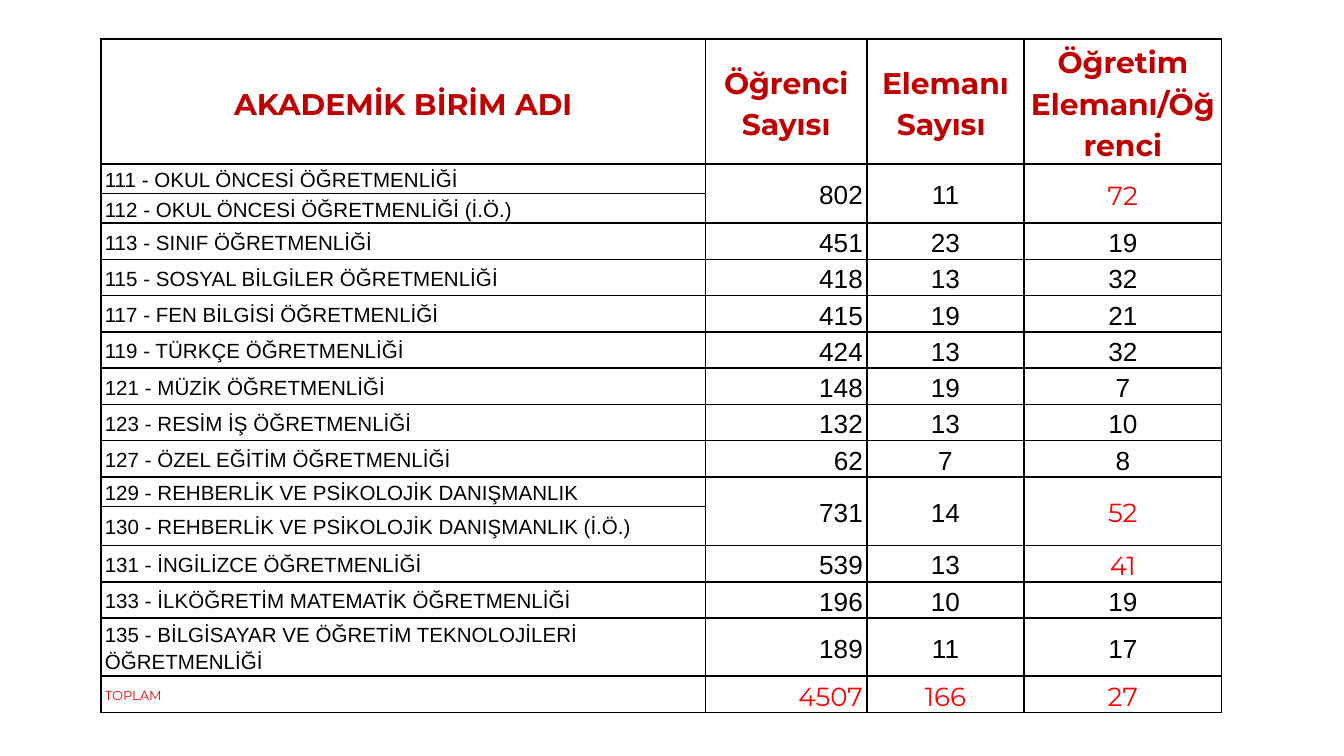
import pptx
import pptx.dml.color
import pptx.enum.text
import pptx.oxml
import pptx.oxml.ns
import pptx.util
from pptx.util import Inches

ALIGN = pptx.enum.text.PP_ALIGN
BORDER_COLOR = "000000"
HIGH_RATIO = 40  # students per teacher above this are shown in red

COLUMN_WIDTHS = [4.5, 1.2, 1.17, 1.47]
COLUMN_ALIGNMENTS = [ALIGN.LEFT, ALIGN.RIGHT, ALIGN.CENTER, ALIGN.CENTER]
HEADER_HEIGHT = 0.92
ROW_HEIGHT = 0.27

HEADER = ["AKADEMİK BİRİM ADI", "Öğrenci Sayısı", "Elemanı Sayısı ", "Öğretim Elemanı/Öğrenci"]

# Unit names with row heights, then students, teachers and their ratio
UNITS = [
    ([("111 - OKUL ÖNCESİ ÖĞRETMENLİĞİ", 0.22),
      ("112 - OKUL ÖNCESİ ÖĞRETMENLİĞİ (İ.Ö.)", 0.22)], 802, 11, 72),
    ([("113 - SINIF ÖĞRETMENLİĞİ", ROW_HEIGHT)], 451, 23, 19),
    ([("115 - SOSYAL BİLGİLER ÖĞRETMENLİĞİ", ROW_HEIGHT)], 418, 13, 32),
    ([("117 - FEN BİLGİSİ ÖĞRETMENLİĞİ", ROW_HEIGHT)], 415, 19, 21),
    ([("119 - TÜRKÇE ÖĞRETMENLİĞİ", ROW_HEIGHT)], 424, 13, 32),
    ([("121 - MÜZİK ÖĞRETMENLİĞİ", ROW_HEIGHT)], 148, 19, 7),
    ([("123 - RESİM İŞ ÖĞRETMENLİĞİ", ROW_HEIGHT)], 132, 13, 10),
    ([("127 - ÖZEL EĞİTİM ÖĞRETMENLİĞİ", ROW_HEIGHT)], 62, 7, 8),
    ([("129 - REHBERLİK VE PSİKOLOJİK DANIŞMANLIK", 0.22),
      ("130 - REHBERLİK VE PSİKOLOJİK DANIŞMANLIK (İ.Ö.)", 0.29)], 731, 14, 52),
    ([("131 - İNGİLİZCE ÖĞRETMENLİĞİ", ROW_HEIGHT)], 539, 13, 41),
    ([("133 - İLKÖĞRETİM MATEMATİK ÖĞRETMENLİĞİ", ROW_HEIGHT)], 196, 10, 19),
    ([("135 - BİLGİSAYAR VE ÖĞRETİM TEKNOLOJİLERİ ÖĞRETMENLİĞİ", 0.43)], 189, 11, 17),
]
TOTAL = ["TOPLAM", 4507, 166, 27]

HEADER_FORMAT = {"size": 16, "name": "Montserrat", "color": "C00000", "bold": True}
NAME_FORMAT = {"size": 11, "name": "Arial", "color": "000000", "bold": False}
NUMBER_FORMAT = {**NAME_FORMAT, "size": 14}
RED_FORMAT = {**NUMBER_FORMAT, "name": "Montserrat", "color": "FF0000"}
TOTAL_NAME_FORMAT = {**RED_FORMAT, "size": 7}


def rgb(color):
    return pptx.dml.color.RGBColor.from_string(color)


def set_format(font, text_format):
    for attribute, value in text_format.items():
        if attribute == "color":
            font.color.rgb = rgb(value)
        else:
            setattr(font, attribute, pptx.util.Pt(value) if attribute == "size" else value)


def set_borders(cell):
    properties = cell._tc.get_or_add_tcPr()
    for position, side in enumerate(("lnL", "lnR", "lnT", "lnB")):
        line = pptx.oxml.parse_xml(
            f'<a:{side} {pptx.oxml.ns.nsdecls("a")} w="12700"><a:solidFill>'
            f'<a:srgbClr val="{BORDER_COLOR}"/></a:solidFill></a:{side}>')
        properties.insert(position, line)


def write_cell(cell, text, text_format, alignment):
    margins = {"margin_left": 0.03, "margin_right": 0.03, "margin_top": 0, "margin_bottom": 0}
    for attribute, value in margins.items():
        setattr(cell, attribute, Inches(value))
    cell.vertical_anchor = pptx.enum.text.MSO_ANCHOR.MIDDLE
    cell.fill.solid()
    cell.fill.fore_color.rgb = rgb("FFFFFF")
    set_borders(cell)
    if text is None:
        return
    paragraph = cell.text_frame.paragraphs[0]
    paragraph.alignment = alignment
    paragraph.line_spacing = 1.15
    run = paragraph.add_run()
    run.text = str(text)
    set_format(run.font, text_format)


def write_row(table, row, values, formats, alignments):
    for column, content in enumerate(zip(values, formats, alignments)):
        write_cell(table.cell(row, column), *content)


def add_staff_table(slide, left, top):
    row_heights = [HEADER_HEIGHT]
    row_heights += [height for names, *_ in UNITS for _, height in names]
    row_heights.append(ROW_HEIGHT)
    table = slide.shapes.add_table(
        len(row_heights), len(COLUMN_WIDTHS), Inches(left), Inches(top),
        Inches(sum(COLUMN_WIDTHS)), Inches(sum(row_heights))).table
    table.first_row = table.horz_banding = False
    for column, width in zip(table.columns, COLUMN_WIDTHS):
        column.width = Inches(width)
    for row, height in zip(table.rows, row_heights):
        row.height = Inches(height)

    # Header
    write_row(table, 0, HEADER, [HEADER_FORMAT] * 4, [ALIGN.CENTER] * 4)

    # Units; paired programmes share their numbers
    row = 1
    for names, students, teachers, ratio in UNITS:
        ratio_format = RED_FORMAT if ratio > HIGH_RATIO else NUMBER_FORMAT
        formats = [NAME_FORMAT, NUMBER_FORMAT, NUMBER_FORMAT, ratio_format]
        for offset, (name, _) in enumerate(names):
            numbers = [None] * 3 if offset else [students, teachers, ratio]
            write_row(table, row + offset, [name, *numbers], formats, COLUMN_ALIGNMENTS)
        last_row = row + len(names) - 1
        if last_row > row:
            for column in (1, 2, 3):
                table.cell(row, column).merge(table.cell(last_row, column))
        row = last_row + 1

    # Total
    write_row(table, row, TOTAL, [TOTAL_NAME_FORMAT] + [RED_FORMAT] * 3, COLUMN_ALIGNMENTS)


def main():
    presentation = pptx.Presentation()
    presentation.slide_width = Inches(10)
    presentation.slide_height = presentation.slide_width * 9 // 16
    slide = presentation.slides.add_slide(presentation.slide_layouts[6])
    add_staff_table(slide, 0.75, 0.29)
    presentation.save("out.pptx")


if __name__ == "__main__":
    main()
